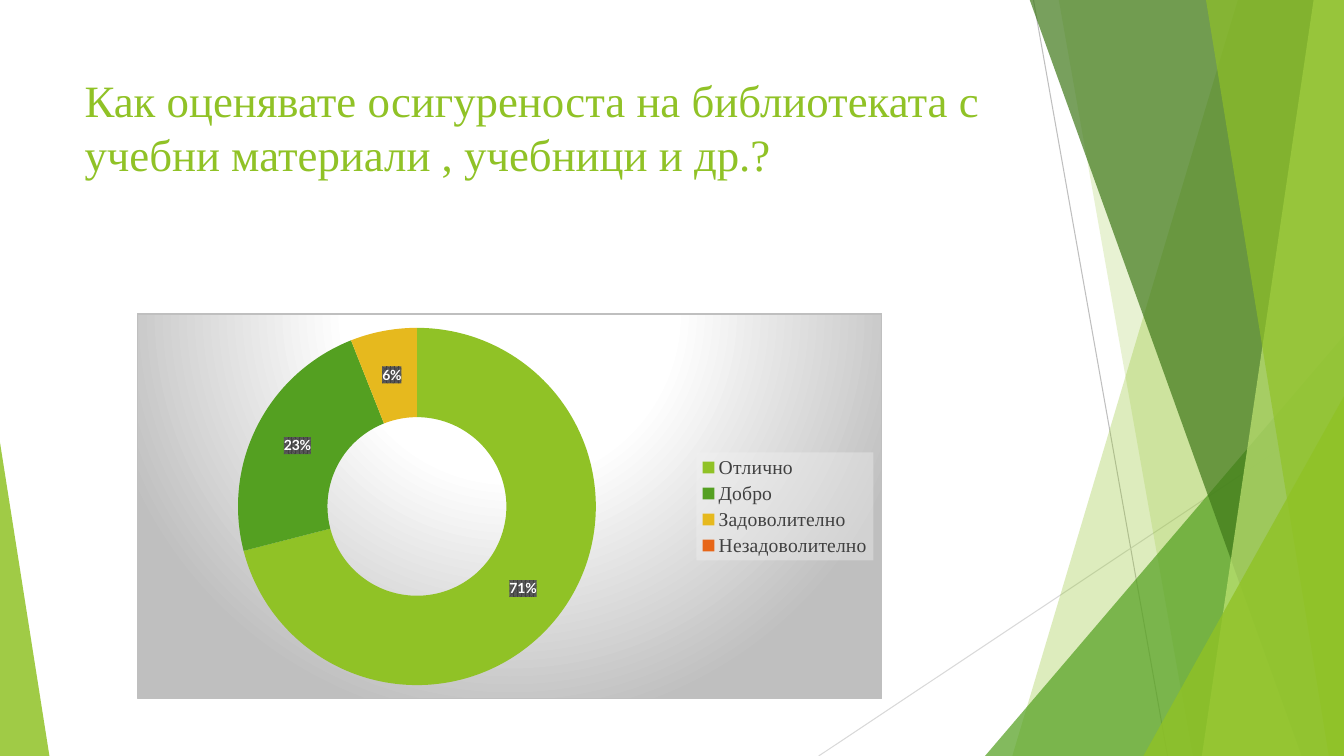
"""Build a slide with a library survey doughnut chart and green facet artwork."""
import pptx
import pptx.chart.data
import pptx.dml.color
import pptx.enum.chart
import pptx.enum.shapes
import pptx.oxml
import pptx.oxml.ns
import pptx.util

PX = 9144
WIDTH, HEIGHT = 1333, 750
GREEN = "90C226"
SERIF = "Times New Roman"
NAMESPACES = pptx.oxml.ns.nsdecls("a", "c")


def color(value):
    return pptx.dml.color.RGBColor.from_string(value)


def add_background(parent, content):
    markup = f"<c:spPr {NAMESPACES}>{content}</c:spPr>"
    parent.find(pptx.oxml.ns.qn("c:txPr")).addprevious(pptx.oxml.parse_xml(markup))


deck = pptx.Presentation()
deck.slide_width, deck.slide_height = WIDTH * PX, HEIGHT * PX
page = deck.slides.add_slide(deck.slide_layouts[6])

for start_x, start_y, end_x, line_color in [
    (1025, 0, 1158, "BFBFBF"),
    (WIDTH, 403, 812, "D9D9D9"),
]:
    line = page.shapes.add_connector(
        pptx.enum.shapes.MSO_CONNECTOR.STRAIGHT,
        start_x * PX, start_y * PX, end_x * PX, HEIGHT * PX)
    line.line.color.rgb = color(line_color)
    line.line.width = pptx.util.Pt(0.75)
    line._element.spPr.append(pptx.oxml.parse_xml(f"<a:effectLst {NAMESPACES}/>"))

facets = [
    ("band", 1228, 1004, GREEN, 30),
    ("band", 1050, 1183, GREEN, 20),
    ("triangle", (977, 333, 356), 1, "54A021", 72),
    ("band", 1021, 1291, "3F7819", 70),
    ("band", 1303, 1192, "C0E474", 70),
    ("band", 1196, 1318, GREEN, 65),
    ("triangle", (1134, 393, 199), 1, GREEN, 80),
    ("triangle", (0, 439, 49), 0, GREEN, 85),
]
for kind, first, second, fill, opacity in facets:
    if kind == "band":
        builder = page.shapes.build_freeform(first, -1, scale=PX)
        builder.add_line_segments([(WIDTH, -1), (WIDTH, HEIGHT), (second, HEIGHT)])
        facet = builder.convert_to_shape()
    else:
        left, top, width = first
        facet = page.shapes.add_shape(
            pptx.enum.shapes.MSO_SHAPE.ISOSCELES_TRIANGLE,
            left * PX, top * PX, width * PX, (HEIGHT - top) * PX)
        facet.adjustments[0] = second
    facet.shadow.inherit = False
    facet.line.fill.background()
    facet.fill.solid()
    facet.fill.fore_color.rgb = color(fill)
    tint = facet._element.spPr.find(".//" + pptx.oxml.ns.qn("a:srgbClr"))
    tint.append(pptx.oxml.parse_xml(f'<a:alpha {NAMESPACES} val="{opacity * 1000}"/>'))

title = page.shapes.add_textbox(74 * PX, 67 * PX, 940 * PX, 144 * PX)
title.text_frame.word_wrap = True
title.text_frame.text = (
    "Как оценявате осигуреноста на библиотеката с учебни материали , учебници и др.?")
title_font = title.text_frame.paragraphs[0].runs[0].font
title_font.name, title_font.size = SERIF, pptx.util.Pt(32)
title_font.color.rgb = color(GREEN)

ratings = [
    ("Отлично", 71, GREEN),
    ("Добро", 23, "54A021"),
    ("Задоволително", 6, "E6B91E"),
    ("Незадоволително", None, "E76618"),
]
data = pptx.chart.data.CategoryChartData()
data.categories = [name for name, value, fill in ratings]
data.add_series("Series 1", [value for name, value, fill in ratings])
chart = page.shapes.add_chart(
    pptx.enum.chart.XL_CHART_TYPE.DOUGHNUT,
    136 * PX, 311 * PX, 739 * PX, 383 * PX, data).chart
chart.has_title = False
chart.has_legend = True
chart.legend.position = pptx.enum.chart.XL_LEGEND_POSITION.RIGHT
chart.legend.include_in_layout = False

plot = chart.plots[0]
plot.vary_by_categories = True
for index, (name, value, fill) in enumerate(ratings):
    slice_format = plot.series[0].points[index].format
    slice_format.fill.solid()
    slice_format.fill.fore_color.rgb = color(fill)
    slice_format.line.fill.background()

labels = plot.series[0].data_labels
labels.show_percentage = True
labels.show_value = False
labels.number_format = "0%"
labels.number_format_is_linked = False
labels.font.bold = True

for font, face, size, font_color in [
    (chart.font, "Lato", 10, "000000"),
    (chart.legend.font, SERIF, 14, "404040"),
    (labels.font, "Lato", 10, "FFFFFF"),
]:
    font.name, font.size = face, pptx.util.Pt(size)
    font.color.rgb = color(font_color)

add_background(chart._chartSpace, """
<a:gradFill><a:gsLst>
<a:gs pos="0"><a:srgbClr val="FFFFFF"/></a:gs>
<a:gs pos="39000"><a:srgbClr val="FFFFFF"/></a:gs>
<a:gs pos="100000"><a:srgbClr val="BFBFBF"/></a:gs>
</a:gsLst><a:path path="circle">
<a:fillToRect l="50000" t="-80000" r="50000" b="180000"/>
</a:path></a:gradFill>
<a:ln w="9525"><a:solidFill><a:srgbClr val="BFBFBF"/></a:solidFill></a:ln>""")
add_background(chart.legend._element, """
<a:solidFill><a:srgbClr val="F2F2F2"><a:alpha val="39000"/></a:srgbClr></a:solidFill>
<a:ln><a:noFill/></a:ln>""")
add_background(labels._element, """
<a:pattFill prst="pct75"><a:fgClr><a:srgbClr val="404040"/></a:fgClr>
<a:bgClr><a:srgbClr val="595959"/></a:bgClr></a:pattFill>
<a:ln><a:noFill/></a:ln>""")

deck.save("out.pptx")
